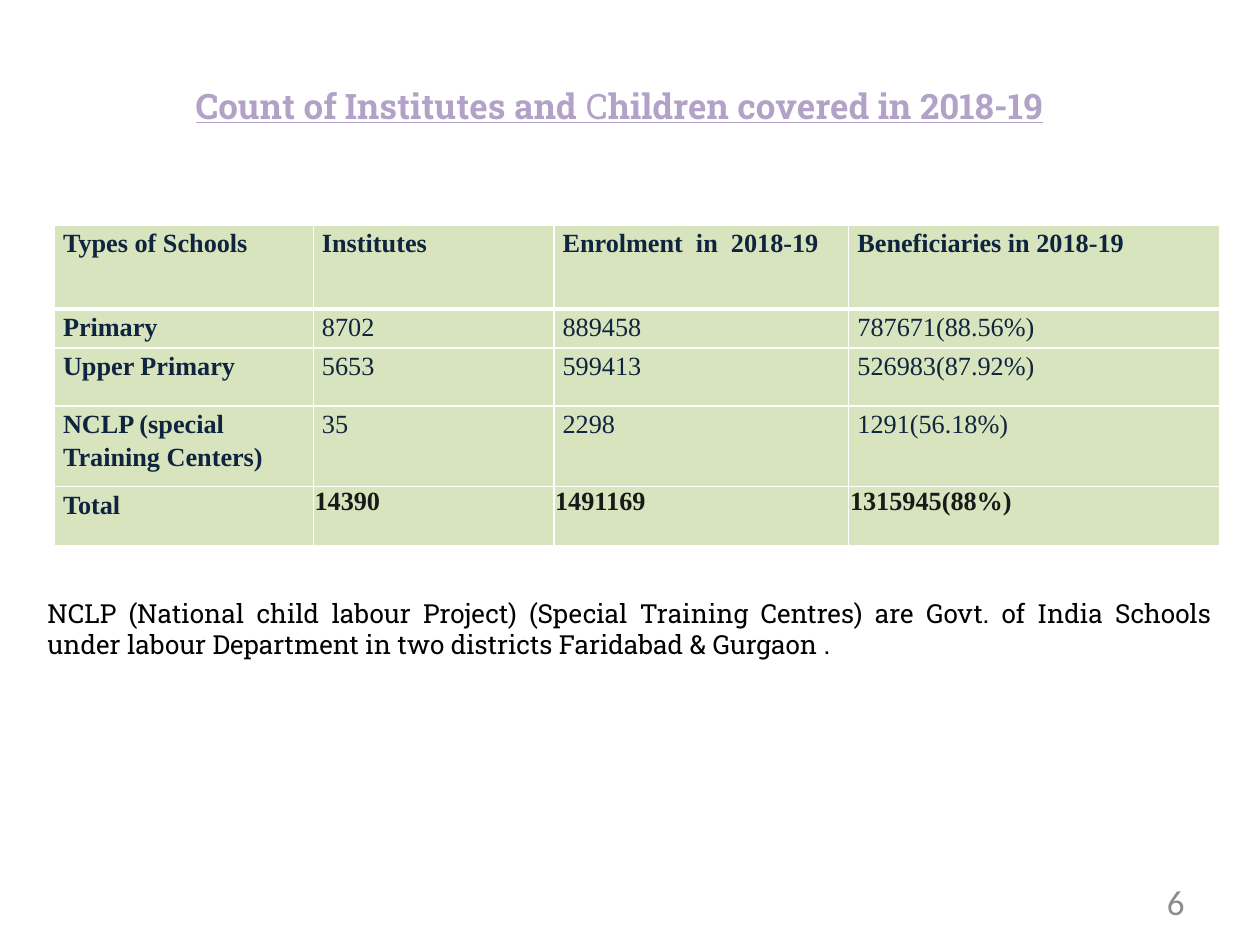
from lxml.etree import SubElement
from pptx import Presentation
from pptx.dml.color import RGBColor
from pptx.enum.text import MSO_ANCHOR as Anchor, PP_ALIGN as Align
from pptx.oxml.ns import qn
from pptx.util import Pt

LILAC = RGBColor(0xB3, 0xA2, 0xC7)
PALE_GREEN = RGBColor(0xD7, 0xE4, 0xBD)
NAVY = RGBColor(0x0F, 0x24, 0x3E)
CHARCOAL = RGBColor(0x19, 0x19, 0x19)
GRAY = RGBColor(0x8C, 0x8C, 0x8C)
BLACK = RGBColor(0x00, 0x00, 0x00)
WHITE = RGBColor(0xFF, 0xFF, 0xFF)

COLUMN_WIDTHS = [148, 137.5, 168.5, 212]
ROW_HEIGHTS = [48, 22.5, 33, 46, 34]
ROWS = [
    ["Types of Schools", "Institutes", "Enrolment  in  2018-19", "Beneficiaries in 2018-19"],
    ["Primary", "8702", "889458", "787671(88.56%)"],
    ["Upper Primary", "5653", "599413", "526983(87.92%)"],
    ["NCLP (special Training Centers)", "35", "2298", "1291(56.18%)"],
    ["Total", "14390", "1491169", "1315945(88%)"],
]
HEADER, TOTAL = 0, len(ROWS) - 1


def style_font(font, name, size, color, bold=False):
    font.name, font.size, font.bold = name, Pt(size), bold
    font.color.rgb = color


def add_border(cell, side, width):
    """Draw a white line on one side (L, R, T or B) of a table cell."""
    line = SubElement(cell._tc.get_or_add_tcPr(), qn(f"a:ln{side}"), w=str(Pt(width)))
    SubElement(SubElement(line, qn("a:solidFill")), qn("a:srgbClr"), val=str(WHITE))


deck = Presentation()
deck.slide_width, deck.slide_height = Pt(720), Pt(540)
page = deck.slides.add_slide(deck.slide_layouts[5])

# Title
title = page.shapes.title
title.left, title.top, title.width, title.height = Pt(0), Pt(30), Pt(708), Pt(60)
title.text_frame.vertical_anchor = Anchor.MIDDLE
para = title.text_frame.paragraphs[0]
para.alignment = Align.CENTER
for words, bold in [("Count of Institutes and ", True), ("C", False),
                    ("hildren covered in 2018-19", True)]:
    span = para.add_run()
    span.text = words
    style_font(span.font, "Roboto Slab", 20, LILAC, bold)
    span.font.underline = True

# Table of schools
table = page.shapes.add_table(len(ROWS), len(COLUMN_WIDTHS), Pt(31), Pt(128.5),
                              Pt(sum(COLUMN_WIDTHS)), Pt(sum(ROW_HEIGHTS))).table
for column, width in zip(table.columns, COLUMN_WIDTHS):
    column.width = Pt(width)
for row, height in zip(table.rows, ROW_HEIGHTS):
    row.height = Pt(height)

for r, texts in enumerate(ROWS):
    for c, text in enumerate(texts):
        cell = table.cell(r, c)
        is_sum = r == TOTAL and c > 0
        cell.margin_left = cell.margin_right = Pt(0.75 if is_sum else 5)
        cell.margin_top = Pt(0.75 if is_sum else 0)
        cell.margin_bottom = Pt(0)
        for side in "LRTB":
            heavy = (r, side) in [(HEADER, "B"), (HEADER + 1, "T")]
            add_border(cell, side, 3 if heavy else 1)
        cell.fill.solid()
        cell.fill.fore_color.rgb = PALE_GREEN
        cell.text = text
        para = cell.text_frame.paragraphs[0]
        para.line_spacing = 1.0 if is_sum else 1.15
        style_font(para.font, "Times New Roman", 15, CHARCOAL if is_sum else NAVY,
                   bold=r in (HEADER, TOTAL) or c == 0)

# Page number
number_box = page.shapes.add_textbox(Pt(516), Pt(500.5), Pt(168), Pt(28.75))
number_box.text_frame.word_wrap = True
number_box.text_frame.vertical_anchor = Anchor.MIDDLE
para = number_box.text_frame.paragraphs[0]
para.text = "6"
para.alignment = Align.RIGHT
style_font(para.font, "Calibri", 20, GRAY)

# Note below the table
note_box = page.shapes.add_textbox(Pt(20), Pt(337.5), Pt(680), Pt(62))
note_box.text_frame.word_wrap = True
para = note_box.text_frame.paragraphs[0]
para.text = ("NCLP (National child labour Project) (Special Training Centres) are Govt. of India "
             "Schools under labour Department in two districts Faridabad & Gurgaon .")
para.alignment = Align.JUSTIFY
style_font(para.font, "Roboto Slab", 15, BLACK)

deck.save("out.pptx")
